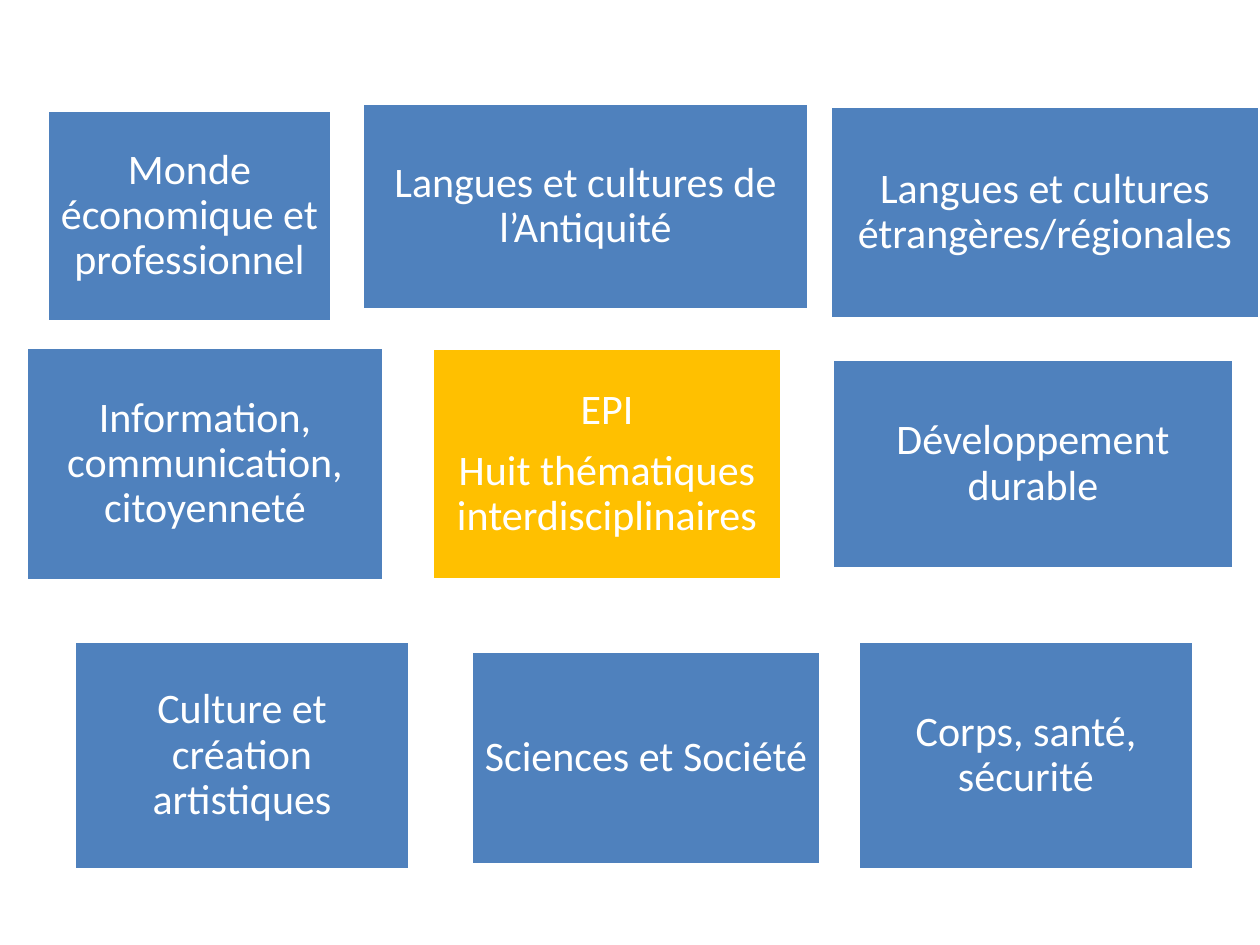
from pptx import Presentation
from pptx.dml.color import RGBColor
from pptx.enum.shapes import MSO_SHAPE
from pptx.enum.text import MSO_ANCHOR, PP_ALIGN
from pptx.util import Emu, Pt

PX_PER_INCH = 126
BLUE = RGBColor(0x4F, 0x81, 0xBD)
GOLD = RGBColor(0xFF, 0xC0, 0x00)
WHITE = RGBColor(0xFF, 0xFF, 0xFF)
FONT_SIZE = 24
INSET = 12

# left, top, width, height in px, then the text
THEMES = [
    (47, 110, 285, 212, "Monde économique et professionnel"),
    (362, 103, 447, 207, "Langues et cultures de l’Antiquité"),
    (830, 106, 430, 213, "Langues et cultures étrangères/régionales"),
    (26, 347, 358, 234, "Information, communication, citoyenneté"),
    (832, 359, 402, 210, "Développement durable"),
    (74, 641, 336, 229, "Culture et création artistiques"),
    (471, 651, 350, 214, "Sciences et Société"),
    (858, 641, 336, 229, "Corps, santé, sécurité"),
]
CENTRE = (432, 348, 350, 232, "EPI\nHuit thématiques interdisciplinaires")


def px(length):
    return Emu(round(length * 914400 / PX_PER_INCH))


def add_box(slide, left, top, width, height, text, color):
    shape = slide.shapes.add_shape(
        MSO_SHAPE.RECTANGLE, px(left), px(top), px(width), px(height))
    shape.shadow.inherit = False
    shape.fill.solid()
    shape.fill.fore_color.rgb = color
    shape.line.color.rgb = WHITE
    shape.line.width = Pt(2)
    write_text(shape.text_frame, text)


def write_text(frame, text):
    frame.word_wrap = True
    frame.vertical_anchor = MSO_ANCHOR.MIDDLE
    frame.margin_left = frame.margin_right = px(INSET)
    frame.margin_top = frame.margin_bottom = px(INSET)
    frame.text = text
    for paragraph in frame.paragraphs:
        paragraph.alignment = PP_ALIGN.CENTER
        paragraph.line_spacing = 0.9
        paragraph.space_after = Pt(0.35 * FONT_SIZE)
        paragraph.font.name = "Calibri"
        paragraph.font.size = Pt(FONT_SIZE)
        paragraph.font.color.rgb = WHITE


def main():
    presentation = Presentation()
    presentation.slide_width = px(1260)
    presentation.slide_height = px(945)
    slide = presentation.slides.add_slide(presentation.slide_layouts[6])
    for theme in THEMES[:4]:
        add_box(slide, *theme, BLUE)
    add_box(slide, *CENTRE, GOLD)
    for theme in THEMES[4:]:
        add_box(slide, *theme, BLUE)
    presentation.save("out.pptx")


if __name__ == "__main__":
    main()
